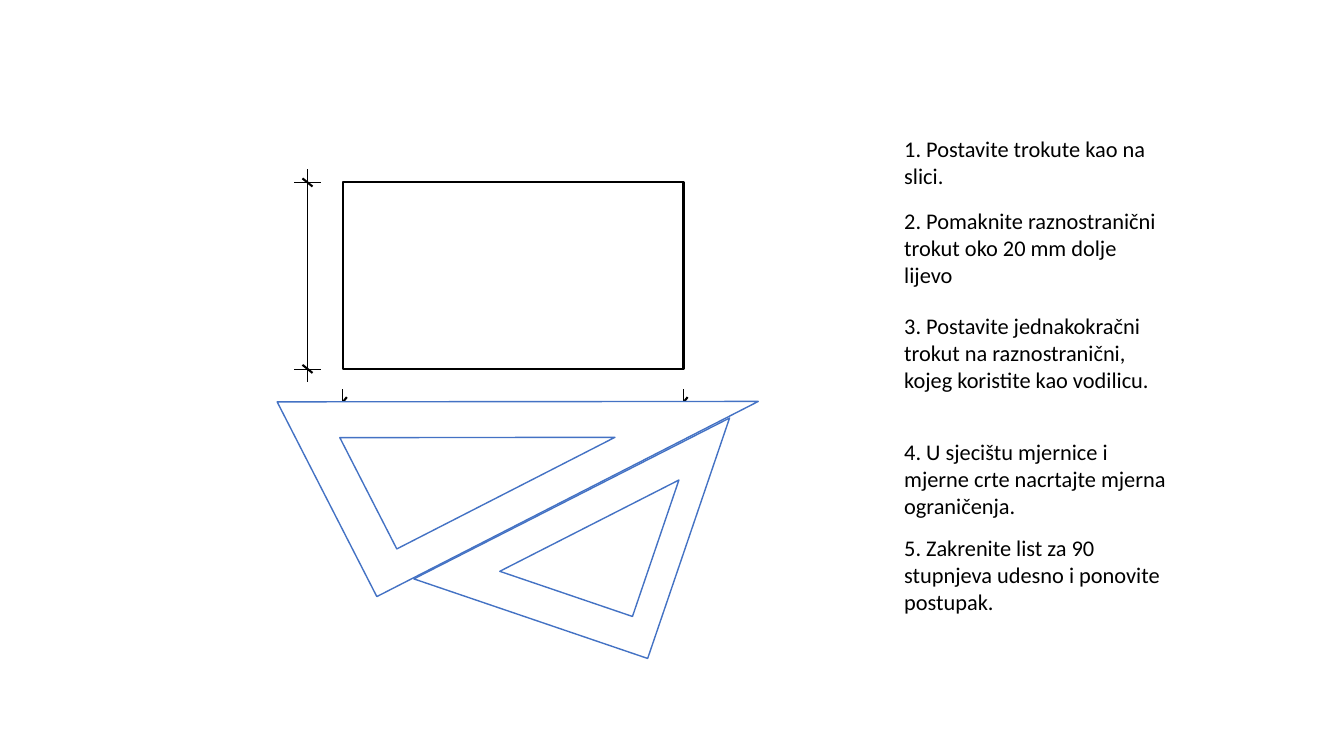
from lxml import etree
from pptx import Presentation
from pptx.dml.color import RGBColor
from pptx.enum.shapes import MSO_CONNECTOR, MSO_SHAPE
from pptx.enum.text import MSO_AUTO_SIZE
from pptx.oxml.ns import qn
from pptx.util import Inches, Pt

BLACK = RGBColor(0x00, 0x00, 0x00)
WHITE = RGBColor(0xFF, 0xFF, 0xFF)
BLUE = RGBColor(0x44, 0x72, 0xC4)

# The grid has one-inch columns and rows.
COLUMNS, ROWS = 13.33, 7.5

# (row of the top edge, height, text)
STEPS = [
    (1.29, 0.64, "1. Postavite trokute kao na slici."),
    (2.01, 0.91, "2. Pomaknite raznostranični trokut oko 20 mm dolje lijevo"),
    (3.05, 0.91, "3. Postavite jednakokračni trokut na raznostranični, "
                 "kojeg koristite kao vodilicu."),
    (4.3, 0.91, "4. U sjecištu mjernice i mjerne crte nacrtajte mjerna ograničenja."),
    (5.25, 0.91, "5. Zakrenite list za 90 stupnjeva udesno i ponovite postupak."),
]
STEP_LEFT, STEP_WIDTH = 8.87, 2.8

# (left, top, width, height)
PLATE = (3.4, 1.81, 3.38, 1.85)

# Each set square: rotation, then its outer and inner outline
SET_SQUARES = [
    (332.9, [(3.01, 2.9, 4.25, 2.17), (3.52, 3.72, 2.43, 1.24)]),
    (288.8, [(4.41, 3.72, 2.52, 2.45), (5.13, 4.52, 1.43, 1.39)]),
]

OVERHANG = 0.13     # dimension line past the plate, and half an extension line
GAP_BELOW, GAP_LEFT = 0.33, 0.35
SLASH_ALONG, SLASH_ACROSS = 0.04, 0.05


def add_outline(shapes, kind, box, line_color, line_width, rotation=0):
    outline = shapes.add_shape(kind, *map(Inches, box))
    outline.shadow.inherit = False
    outline.fill.solid()
    outline.fill.fore_color.rgb = WHITE
    outline.line.color.rgb = line_color
    outline.line.width = Pt(line_width)
    outline.rotation = rotation


def add_line(shapes, start, end, width):
    line = shapes.add_connector(MSO_CONNECTOR.STRAIGHT, *map(Inches, start + end))
    line.line.color.rgb = BLACK
    line.line.width = Pt(width)
    etree.SubElement(line._element.spPr, qn("a:effectLst"))


def add_dimension(shapes, first, last, level, vertical):
    """Draw a dimension line from first to last, with a crossing and a slash at both."""
    def point(along, across):
        return (across, along) if vertical else (along, across)

    add_line(shapes, point(first - OVERHANG, level), point(last + OVERHANG, level), 0.5)
    # The slash leans the other way on the vertical dimension
    lean = SLASH_ACROSS if vertical else -SLASH_ACROSS
    for mark in (first, last):
        add_line(shapes, point(mark, level - OVERHANG), point(mark, level + OVERHANG), 0.5)
        add_line(shapes, point(mark + SLASH_ALONG, level + lean),
                 point(mark - SLASH_ALONG, level - lean), 1.5)


def add_step(shapes, top, height, text):
    step = shapes.add_textbox(*map(Inches, (STEP_LEFT, top, STEP_WIDTH, height)))
    frame = step.text_frame
    frame.word_wrap = True
    frame.auto_size = MSO_AUTO_SIZE.SHAPE_TO_FIT_TEXT
    frame.text = text
    font = frame.paragraphs[0].runs[0].font
    font.name = "Calibri"
    font.size = Pt(16)
    font.color.rgb = BLACK


def main():
    deck = Presentation()
    deck.slide_width, deck.slide_height = Inches(COLUMNS), Inches(ROWS)
    shapes = deck.slides.add_slide(deck.slide_layouts[6]).shapes

    left, top, width, height = PLATE
    right, bottom = left + width, top + height
    add_outline(shapes, MSO_SHAPE.RECTANGLE, PLATE, BLACK, 1.5)
    add_dimension(shapes, left, right, bottom + GAP_BELOW, vertical=False)
    add_dimension(shapes, top, bottom, left - GAP_LEFT, vertical=True)

    for rotation, outlines in SET_SQUARES:
        set_square = shapes.add_group_shape()
        for box in outlines:
            add_outline(set_square.shapes, MSO_SHAPE.RIGHT_TRIANGLE, box, BLUE, 1, rotation)

    for step in STEPS:
        add_step(shapes, *step)
    deck.save("out.pptx")


if __name__ == "__main__":
    main()
